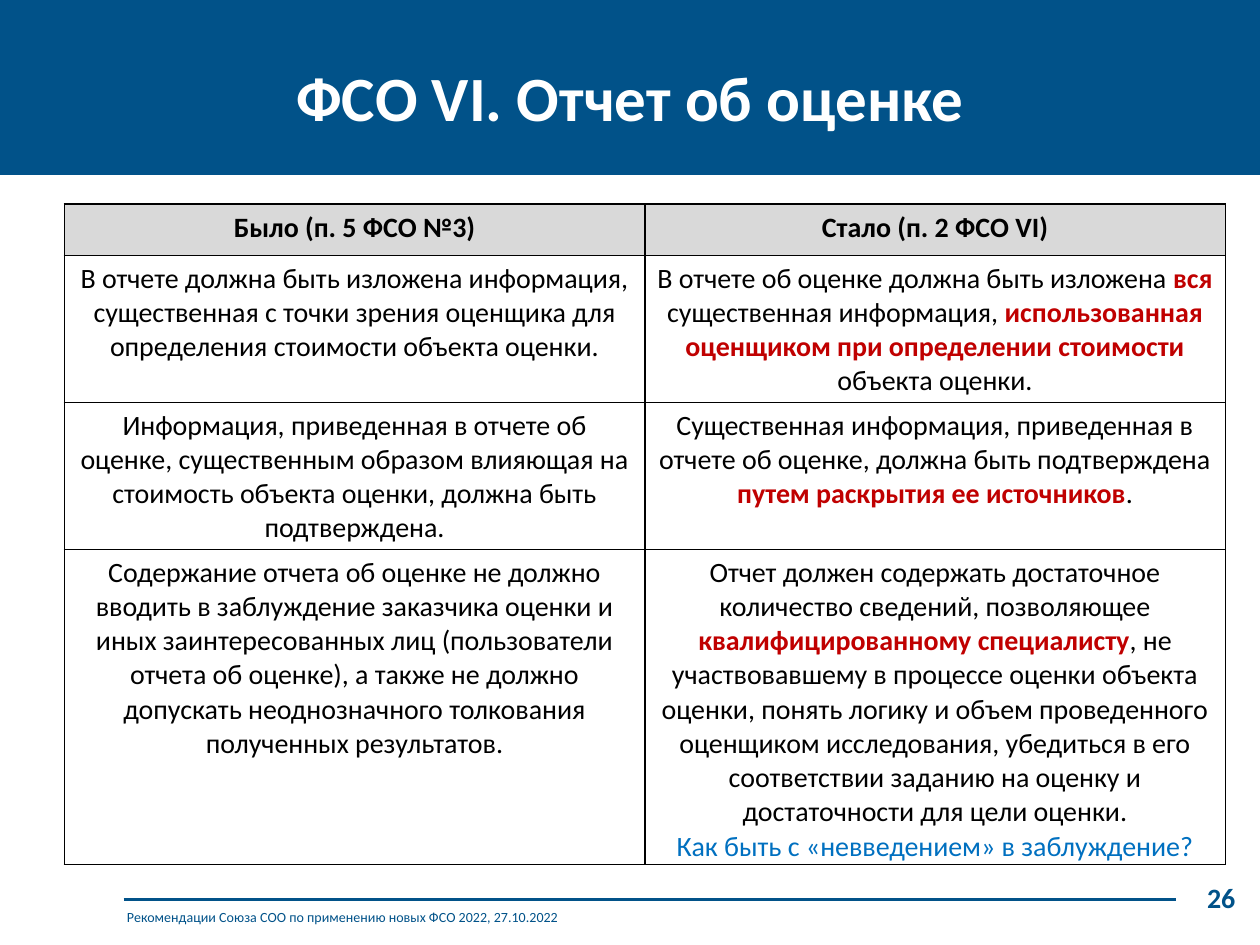
from lxml.etree import SubElement
from pptx import Presentation
from pptx.dml.color import RGBColor
from pptx.enum.shapes import MSO_CONNECTOR, MSO_SHAPE
from pptx.enum.text import MSO_ANCHOR, PP_ALIGN
from pptx.oxml.ns import qn
from pptx.util import Pt

BLUE = RGBColor(0x01, 0x52, 0x89)
WHITE = RGBColor(0xFF, 0xFF, 0xFF)
BLACK = RGBColor(0x00, 0x00, 0x00)
GREY = RGBColor(0xD9, 0xD9, 0xD9)
RED = RGBColor(0xC0, 0x00, 0x00)
LIGHT_BLUE = RGBColor(0x00, 0x70, 0xC0)


def span(text, **style):
    """Pair a piece of text with its format: size, color, bold."""
    return text, style


def key(text):
    return span(text, color=RED, bold=True)


class SlideBuilder:
    font_name = "Calibri"
    font_size = 16

    def __init__(self, deck):
        self.page = deck.slides.add_slide(deck.slide_layouts[6])

    def fill_para(self, para, spans, align):
        para.alignment = align
        for text, style in spans:
            run = para.add_run()
            run.text = text
            run.font.name = self.font_name
            run.font.size = Pt(style.get("size", self.font_size))
            run.font.bold = style.get("bold", False)
            run.font.color.rgb = style.get("color", BLACK)

    def band(self, left, top, width, height, color):
        band = self.page.shapes.add_shape(
            MSO_SHAPE.RECTANGLE, Pt(left), Pt(top), Pt(width), Pt(height))
        band.shadow.inherit = False
        band.fill.solid()
        band.fill.fore_color.rgb = color
        band.line.fill.background()

    def text(self, left, top, width, height, content, align=PP_ALIGN.LEFT,
             anchor=MSO_ANCHOR.TOP):
        box = self.page.shapes.add_textbox(Pt(left), Pt(top), Pt(width), Pt(height))
        frame = box.text_frame
        frame.word_wrap = True
        frame.vertical_anchor = anchor
        self.fill_para(frame.paragraphs[0], [content], align)

    def rule(self, left, right, y, color, weight):
        rule = self.page.shapes.add_connector(
            MSO_CONNECTOR.STRAIGHT, Pt(left), Pt(y), Pt(right), Pt(y))
        rule.line.color.rgb = color
        rule.line.width = Pt(weight)
        SubElement(rule._element.spPr, qn("a:effectLst"))

    def border(self, cell, color, weight):
        properties = cell._tc.get_or_add_tcPr()
        for side in ("lnL", "lnR", "lnT", "lnB"):
            line = SubElement(properties, qn(f"a:{side}"), w=str(Pt(weight)))
            fill = SubElement(line, qn("a:solidFill"))
            SubElement(fill, qn("a:srgbClr"), val=str(color))

    def table(self, left, top, column_width, heights, rows):
        columns = len(rows[0])
        table = self.page.shapes.add_table(
            len(rows), columns, Pt(left), Pt(top),
            Pt(column_width * columns), Pt(sum(heights))).table
        table.horz_banding = False
        for column in table.columns:
            column.width = Pt(column_width)
        for row_index, (height, row) in enumerate(zip(heights, rows)):
            table.rows[row_index].height = Pt(height)
            for column_index, paragraphs in enumerate(row):
                cell = table.cell(row_index, column_index)
                cell.margin_bottom = 0
                self.border(cell, BLACK, 1)
                if row_index == 0:
                    cell.fill.solid()
                    cell.fill.fore_color.rgb = GREY
                else:
                    cell.fill.background()
                frame = cell.text_frame
                for index, spans in enumerate(paragraphs):
                    para = frame.add_paragraph() if index else frame.paragraphs[0]
                    self.fill_para(para, spans, PP_ALIGN.CENTER)


# Each cell is a list of paragraphs, each paragraph a list of spans
ROWS = [
    [
        [[span("Было (п. 5 ФСО №3)", bold=True)]],
        [[span("Стало (п. 2 ФСО VI)", bold=True)]],
    ],
    [
        [[span("В отчете должна быть изложена информация, существенная с точки "
               "зрения оценщика для определения стоимости объекта оценки.")]],
        [[span("В отчете об оценке должна быть изложена "),
          key("вся"),
          span(" существенная информация, "),
          key("использованная оценщиком при определении стоимости "),
          span("объекта оценки.")]],
    ],
    [
        [[span("Информация, приведенная в отчете об оценке, существенным образом "
               "влияющая на стоимость объекта оценки, должна быть подтверждена.")]],
        [[span("Существенная информация, приведенная в отчете об оценке, "
               "должна быть подтверждена "),
          key("путем раскрытия ее источников"),
          span(".")]],
    ],
    [
        [[span("Содержание отчета об оценке не должно вводить в заблуждение "
               "заказчика оценки и иных заинтересованных лиц (пользователи отчета "
               "об оценке), а также не должно допускать неоднозначного толкования "
               "полученных результатов.")]],
        [[span("Отчет должен содержать достаточное количество сведений, "
               "позволяющее "),
          key("квалифицированному специалисту"),
          span(", не участвовавшему в процессе оценки объекта оценки, понять "
               "логику и объем проведенного оценщиком исследования, убедиться в "
               "его соответствии заданию на оценку и достаточности для цели "
               "оценки.")],
         [span("Как быть с «невведением» в заблуждение?", color=LIGHT_BLUE)]],
    ],
]


def main():
    deck = Presentation()
    deck.slide_width, deck.slide_height = Pt(720), Pt(540)
    slide = SlideBuilder(deck)

    # Footer
    slide.text(524, 499.7, 189, 26.6, span("26", color=BLUE, bold=True),
               align=PP_ALIGN.RIGHT)
    slide.rule(70.7, 672, 514, BLUE, 1.5)
    slide.text(65.5, 515.5, 600.5, 17, span(
        "Рекомендации Союза СОО по применению новых ФСО 2022, 27.10.2022",
        size=8, color=BLUE))

    # Title band
    slide.band(0, 0, 720, 100, BLUE)
    slide.text(0, 26, 720, 57.6,
               span("ФСО VI. Отчет об оценке", size=36, color=WHITE, bold=True),
               align=PP_ALIGN.CENTER, anchor=MSO_ANCHOR.MIDDLE)

    # Comparison table
    slide.table(36.8, 116.7, 331.7, [29.2, 84, 84, 180], ROWS)

    deck.save("out.pptx")


if __name__ == "__main__":
    main()
